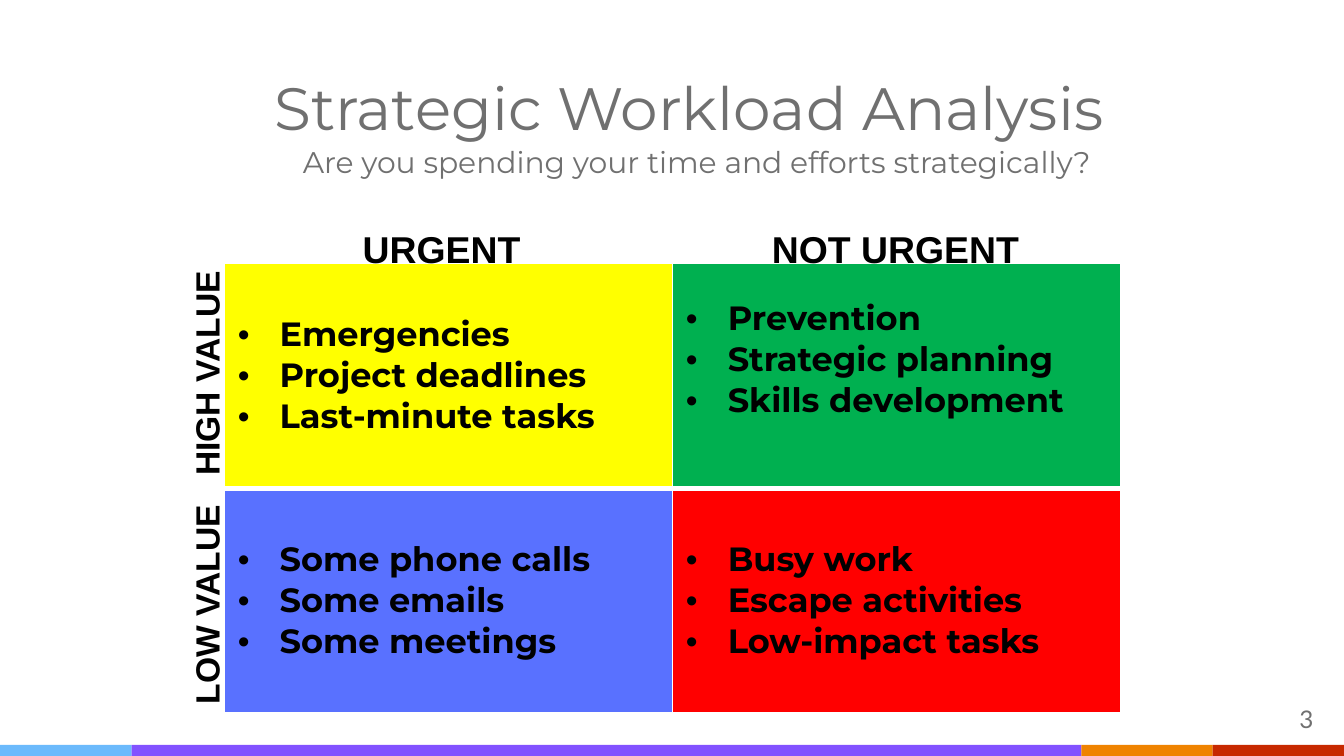
from lxml import etree
from pptx import Presentation
from pptx.dml.color import RGBColor
from pptx.enum.shapes import MSO_SHAPE
from pptx.enum.text import MSO_ANCHOR, PP_ALIGN
from pptx.oxml.ns import qn
from pptx.util import Cm, Pt

RECTANGLE = MSO_SHAPE.RECTANGLE
TOP, MIDDLE, BOTTOM = MSO_ANCHOR.TOP, MSO_ANCHOR.MIDDLE, MSO_ANCHOR.BOTTOM
CENTER, RIGHT = PP_ALIGN.CENTER, PP_ALIGN.RIGHT

COLORS = {
    "gray": "707070", "black": "000000", "white": "FFFFFF",
    "sky": "6BBAFC", "violet": "8252FF", "orange": "EF8300", "rust": "C72900",
    "yellow": "FFFF00", "green": "00B050", "blue": "5971FF", "red": "FF0000",
}


def color(name):
    return RGBColor.from_string(COLORS[name])


def add_text(text, left, top, width, height, size=18, font="Arial", ink="black",
             bold=False, align=CENTER, anchor=TOP, margin=0.25, rotation=0):
    """Add a one-paragraph text box; lengths in cm, margin above and below."""
    box = slide.shapes.add_textbox(Cm(left), Cm(top), Cm(width), Cm(height))
    box.rotation = rotation
    frame = box.text_frame
    frame.word_wrap = True
    frame.vertical_anchor = anchor
    frame.margin_top = frame.margin_bottom = Cm(margin)
    paragraph = frame.paragraphs[0]
    paragraph.alignment = align
    run = paragraph.add_run()
    run.text = text
    run.font.name = font
    run.font.size = Pt(size)
    run.font.bold = bold
    run.font.color.rgb = color(ink)
    return box


presentation = Presentation()
presentation.slide_width = Cm(25.4)
presentation.slide_height = Cm(14.29)
slide = presentation.slides.add_slide(presentation.slide_layouts[6])

# Footer stripe
left = 0
for fill, width in [("sky", 2.49), ("violet", 17.95), ("orange", 2.48), ("rust", 2.48)]:
    stripe = slide.shapes.add_shape(RECTANGLE, Cm(left), Cm(14.08), Cm(width), Cm(0.21))
    stripe.shadow.inherit = False
    stripe.fill.solid()
    stripe.fill.fore_color.rgb = color(fill)
    stripe.line.fill.background()
    left += width

# Headings and slide number
add_text("Strategic Workload Analysis", 2.49, 0.56, 21.08, 2.39,
         size=32, font="Montserrat", ink="gray", anchor=BOTTOM)
subtitle = add_text("Are you spending your time and efforts strategically?",
                    3.38, 2.46, 19.28, 3.02, size=16, font="Montserrat", ink="gray")
subtitle.text_frame.margin_left = Cm(0.56)
add_text("3", 23.55, 13.06, 1.52, 0.86, size=13, font="Lato", ink="gray", align=RIGHT)

# Matrix of value against urgency
quadrants = [
    [("yellow", ["Emergencies", "Project deadlines", "Last-minute tasks"]),
     ("green", ["Prevention", "Strategic planning", "Skills development"])],
    [("blue", ["Some phone calls", "Some emails", "Some meetings"]),
     ("red", ["Busy work", "Escape activities", "Low-impact tasks"])],
]
frame = slide.shapes.add_table(2, 2, Cm(4.24), Cm(4.98), Cm(16.94), Cm(8.5))
table = frame.table
table.first_row = table.horz_banding = False
for row_index, row in enumerate(quadrants):
    for column_index, (fill, tasks) in enumerate(row):
        cell = table.cell(row_index, column_index)
        cell.fill.solid()
        cell.fill.fore_color.rgb = color(fill)
        cell.vertical_anchor = MIDDLE
        if fill == "green":
            cell.margin_bottom = Cm(0.74)  # lifts this list above the middle

        # The edge between the two rows is thicker than the others
        inner_edge = "a:lnT" if row_index else "a:lnB"
        properties = cell._tc.get_or_add_tcPr()
        for position, edge in enumerate(["a:lnL", "a:lnR", "a:lnT", "a:lnB"]):
            border = etree.Element(qn(edge), w=str(Pt(3 if edge == inner_edge else 1)))
            line_fill = etree.SubElement(border, qn("a:solidFill"))
            etree.SubElement(line_fill, qn("a:srgbClr"), val=COLORS["white"])
            properties.insert(position, border)

        cell.text = "\n".join(tasks)
        for paragraph in cell.text_frame.paragraphs:
            indent = paragraph._p.get_or_add_pPr()
            indent.set("marL", str(Cm(0.79)))
            indent.set("indent", str(-Cm(0.79)))
            bullet_color = etree.SubElement(indent, qn("a:buClr"))
            etree.SubElement(bullet_color, qn("a:srgbClr"), val=COLORS["black"])
            etree.SubElement(indent, qn("a:buFont"), typeface="Arial")
            etree.SubElement(indent, qn("a:buChar"), char="•")
            font = paragraph.runs[0].font
            font.name = "Montserrat"
            font.size = Pt(18)
            font.bold = True
            font.color.rgb = color("black")

# Axis labels
for label, left in [("URGENT", 5.54), ("NOT URGENT", 14.12)]:
    add_text(label, left, 4.14, 5.61, 1.12, size=20, bold=True, margin=0.13)
for label, top in [("HIGH VALUE", 6.55), ("LOW VALUE", 10.92)]:
    add_text(label, 1.09, top, 5.61, 1.02, bold=True, margin=0.13, rotation=270)

presentation.save("out.pptx")
